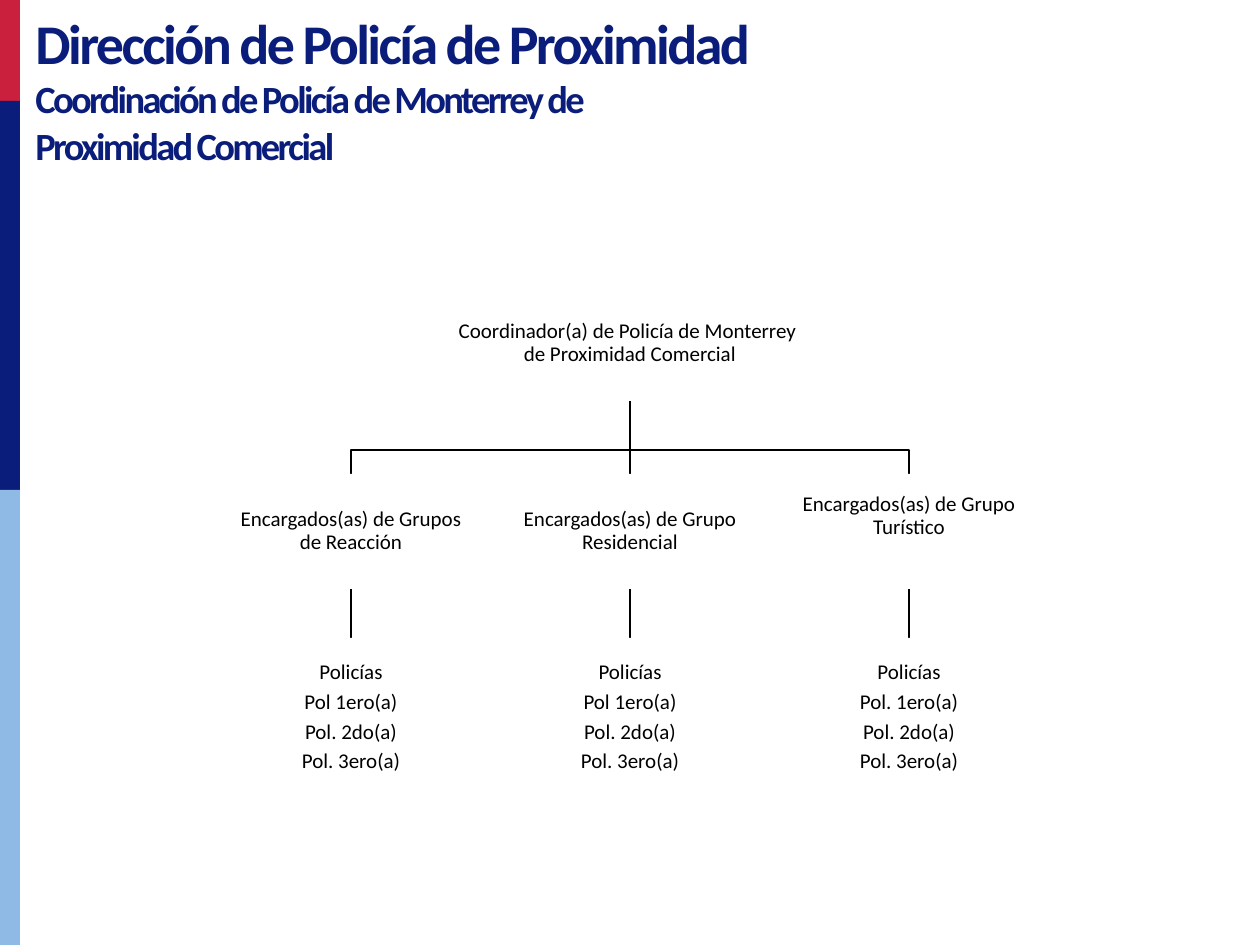
from pptx import Presentation
from pptx.dml.color import RGBColor
from pptx.enum.shapes import MSO_CONNECTOR, MSO_SHAPE
from pptx.enum.text import MSO_ANCHOR, MSO_AUTO_SIZE, PP_ALIGN
from pptx.oxml.ns import qn
from pptx.util import Emu, Pt

RECT = MSO_SHAPE.RECTANGLE
STRAIGHT = MSO_CONNECTOR.STRAIGHT
MIDDLE = MSO_ANCHOR.MIDDLE
CENTER = PP_ALIGN.CENTER
GROW = MSO_AUTO_SIZE.SHAPE_TO_FIT_TEXT

RED = RGBColor(0xCA, 0x1F, 0x3D)
NAVY = RGBColor(0x0A, 0x1D, 0x7A)
SKY = RGBColor(0x8F, 0xBA, 0xE5)
WHITE = RGBColor(0xFF, 0xFF, 0xFF)
BLACK = RGBColor(0, 0, 0)

EMU_PER_PX = 914400 / 126
FONT = "Calibri"


def px(n):
    return Emu(round(n * EMU_PER_PX))


def apply(target, values):
    for name, value in values.items():
        setattr(target, name, value)


class OrgSlide:
    label_font = {"name": FONT, "size": Pt(12)}
    label_paragraph = {"alignment": CENTER, "line_spacing": 0.9, "space_after": Pt(4)}

    def __init__(self, prs):
        self.s = prs.slides.add_slide(prs.slide_layouts[6])

    def rect(self, x, y, w, h, color):
        sp = self.s.shapes.add_shape(RECT, px(x), px(y), px(w), px(h))
        sp.shadow.inherit = False
        sp.fill.solid()
        sp.fill.fore_color.rgb = color
        sp.line.fill.background()
        return sp

    def heading(self, x, y, w, h, lines):
        """Tightly spaced bold title; lines holds (text, points) pairs."""
        tf = self.s.shapes.add_textbox(px(x), px(y), px(w), px(h)).text_frame
        apply(tf, {"word_wrap": True, "auto_size": GROW})
        for i, (text, size) in enumerate(lines):
            p = tf.add_paragraph() if i else tf.paragraphs[0]
            p.text = text
            for r in p.runs:
                apply(r.font, {"name": FONT, "size": Pt(size), "bold": True})
                r.font.color.rgb = NAVY
                r.font._element.set("spc", "-150")

    def box(self, x, y, w, h, lines, bottom=1):
        """White box with centred lines; bottom is the lower inset."""
        tf = self.rect(x, y, w, h, WHITE).text_frame
        apply(tf, {"word_wrap": True, "vertical_anchor": MIDDLE,
                   "margin_left": px(1), "margin_right": px(1),
                   "margin_top": px(1), "margin_bottom": px(bottom)})
        for i, text in enumerate(lines):
            p = tf.add_paragraph() if i else tf.paragraphs[0]
            p.text = text
            apply(p, self.label_paragraph)
            for r in p.runs:
                apply(r.font, self.label_font)
                r.font.color.rgb = BLACK

    def stroke(self, sp):
        sp.line.color.rgb = BLACK
        sp.line.width = Pt(1)

    def vertical(self, x, top, bottom):
        sp = self.s.shapes.add_connector(STRAIGHT, px(x), px(top), px(x), px(bottom))
        self.stroke(sp)
        sp._element.spPr.append(sp._element.makeelement(qn("a:effectLst"), {}))

    def elbow(self, points):
        builder = self.s.shapes.build_freeform(*points[0], scale=EMU_PER_PX)
        builder.add_line_segments(points[1:], close=False)
        sp = builder.convert_to_shape()
        sp.shadow.inherit = False
        sp.fill.background()
        self.stroke(sp)


def main():
    prs = Presentation()
    prs.slide_width, prs.slide_height = px(1260), px(945)
    slide = OrgSlide(prs)

    for top, bottom, color in ((0, 101, RED), (101, 490, NAVY), (490, 945, SKY)):
        slide.rect(0, top, 20, bottom - top, color)
    slide.heading(23, 2, 990, 174, [
        ("Dirección de Policía de Proximidad", 32),
        ("Coordinación de Policía de Monterrey de \vProximidad Comercial", 22),
    ])

    center, step = 630, 279
    box_w, head_w, box_h, officers_h = 231, 378, 115, 159
    head_y, group_y, officers_y, bus_y = 286, 474, 638, 450
    head_bottom, group_bottom = head_y + box_h, group_y + box_h

    # (group title, first officer rank, lower inset)
    groups = [
        ("Encargados(as) de Grupos de Reacción", "Pol 1ero(a)", 1),
        ("Encargados(as) de Grupo Residencial", "Pol 1ero(a)", 1),
        ("Encargados(as) de Grupo Turístico", "Pol. 1ero(a)", 31),
    ]
    columns = [center + step * (i - 1) for i in range(len(groups))]

    for x in columns:
        slide.vertical(x, group_bottom, officers_y)
        if x == center:
            slide.vertical(x, head_bottom, group_y)
        else:
            slide.elbow([(center, head_bottom), (center, bus_y), (x, bus_y), (x, group_y)])

    slide.box(center - head_w / 2, head_y, head_w, box_h,
              ["Coordinador(a) de Policía de Monterrey \vde Proximidad Comercial"])
    for x, (title, first_rank, bottom) in zip(columns, groups):
        left = x - box_w / 2
        slide.box(left, group_y, box_w, box_h, [title], bottom)
        slide.box(left, officers_y, box_w, officers_h,
                  ["Policías", first_rank, "Pol. 2do(a)", "Pol. 3ero(a)"])

    prs.save("out.pptx")


if __name__ == "__main__":
    main()
